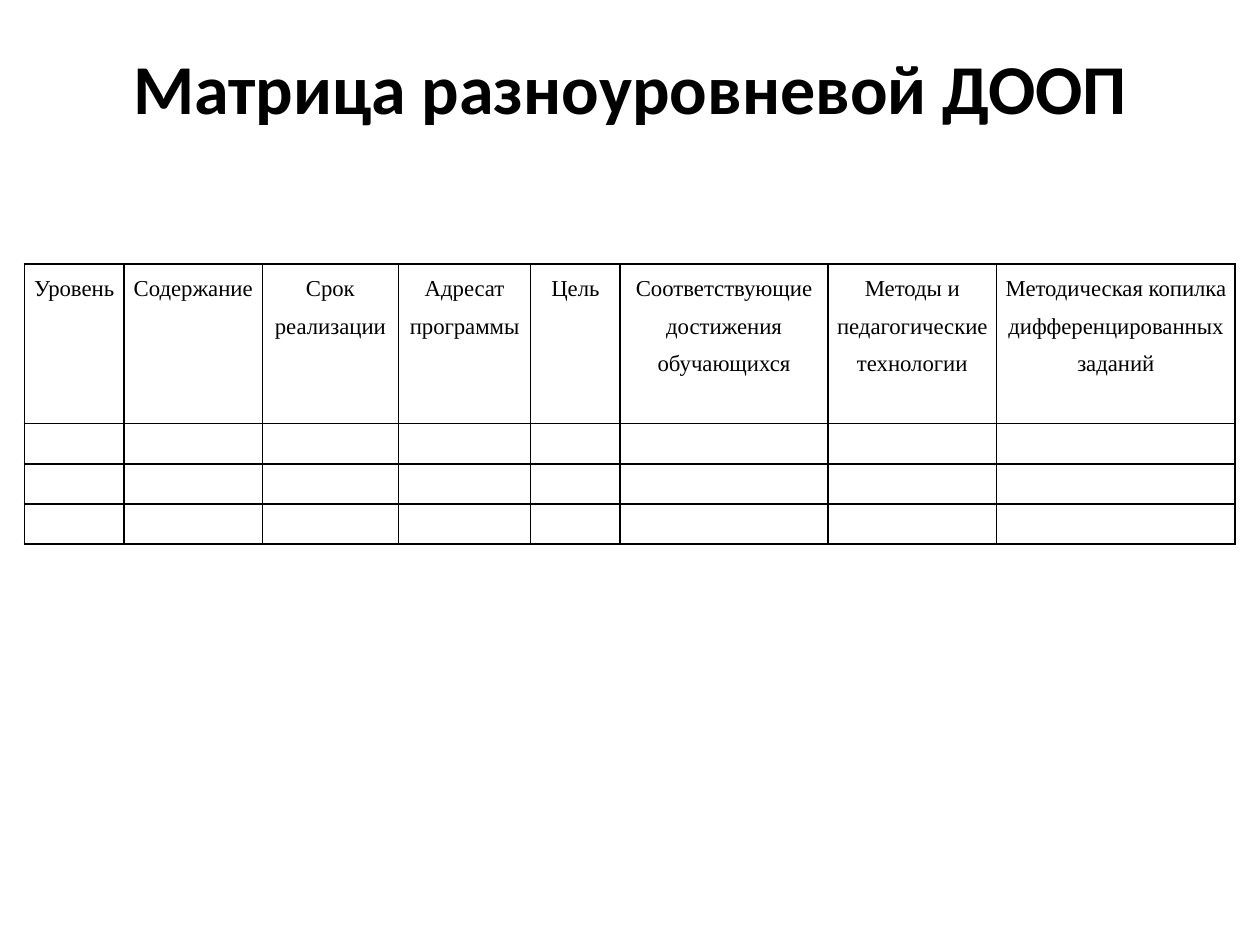
from dataclasses import dataclass

from lxml import etree
from pptx import Presentation
from pptx import util as u
from pptx.dml.color import RGBColor
from pptx.enum import text
from pptx.oxml.ns import qn


@dataclass
class Theme:
    ink: str = "000000"
    title_font: str = "Calibri"
    table_font: str = "Times New Roman"
    title_size: float = 40
    table_size: float = 13
    border_width: float = 1


class Deck:
    def __init__(self, theme):
        self.theme = theme
        self.prs = Presentation()
        self.prs.slide_width, self.prs.slide_height = u.Cm(25.4), u.Cm(19.05)
        self.s = self.prs.slides.add_slide(self.prs.slide_layouts[6])

    def style(self, p, font, size, bold=False):
        p.alignment = text.PP_ALIGN.CENTER
        p.font.name, p.font.size, p.font.bold = font, u.Pt(size), bold
        p.font.color.rgb = RGBColor.from_string(self.theme.ink)

    def title(self, words, x, y, w, h):
        tf = self.s.shapes.add_textbox(u.Cm(x), u.Cm(y), u.Cm(w), u.Cm(h)).text_frame
        tf.word_wrap = True
        tf.vertical_anchor = text.MSO_ANCHOR.MIDDLE
        tf.text = words
        self.style(tf.paragraphs[0], self.theme.title_font, self.theme.title_size, True)

    def borders(self, cell):
        tcPr = cell._tc.get_or_add_tcPr()
        for i, side in enumerate(("lnL", "lnR", "lnT", "lnB")):
            ln = etree.Element(qn(f"a:{side}"), w=str(u.Pt(self.theme.border_width)))
            fill = etree.SubElement(ln, qn("a:solidFill"))
            etree.SubElement(fill, qn("a:srgbClr"), val=self.theme.ink)
            tcPr.insert(i, ln)

    def cell(self, cell, words):
        cell.fill.background()
        cell.margin_left = cell.margin_right = u.Cm(0.17)
        cell.margin_top = cell.margin_bottom = 0
        tf = cell.text_frame
        tf.text = words
        p = tf.paragraphs[0]
        if words:
            p.line_spacing = 1.5
        self.style(p, self.theme.table_font, self.theme.table_size)
        self.borders(cell)

    def table(self, headers, x, y, widths, heights):
        table = self.s.shapes.add_table(
            len(heights), len(widths), u.Cm(x), u.Cm(y),
            u.Cm(sum(widths)), u.Cm(sum(heights))).table
        table.first_row = table.horz_banding = False
        for column, w in zip(table.columns, widths):
            column.width = u.Cm(w)
        for i, h in enumerate(heights):
            table.rows[i].height = u.Cm(h)
            for j, header in enumerate(headers):
                self.cell(table.cell(i, j), header if i == 0 else "")


def main():
    deck = Deck(Theme())
    deck.title("Матрица разноуровневой ДООП", 1.27, 0.76, 22.86, 1.96)
    columns = {
        "Уровень": 2.01,
        "Содержание": 2.79,
        "Срок реализации": 2.74,
        "Адресат программы": 2.67,
        "Цель": 1.8,
        "Соответствующие достижения обучающихся": 4.19,
        "Методы и педагогические технологии": 3.4,
        "Методическая копилка дифференцированных заданий": 4.81,
    }
    deck.table(list(columns), 0.49, 5.32, list(columns.values()), [3.22] + [0.81] * 3)
    deck.prs.save("out.pptx")


if __name__ == "__main__":
    main()
